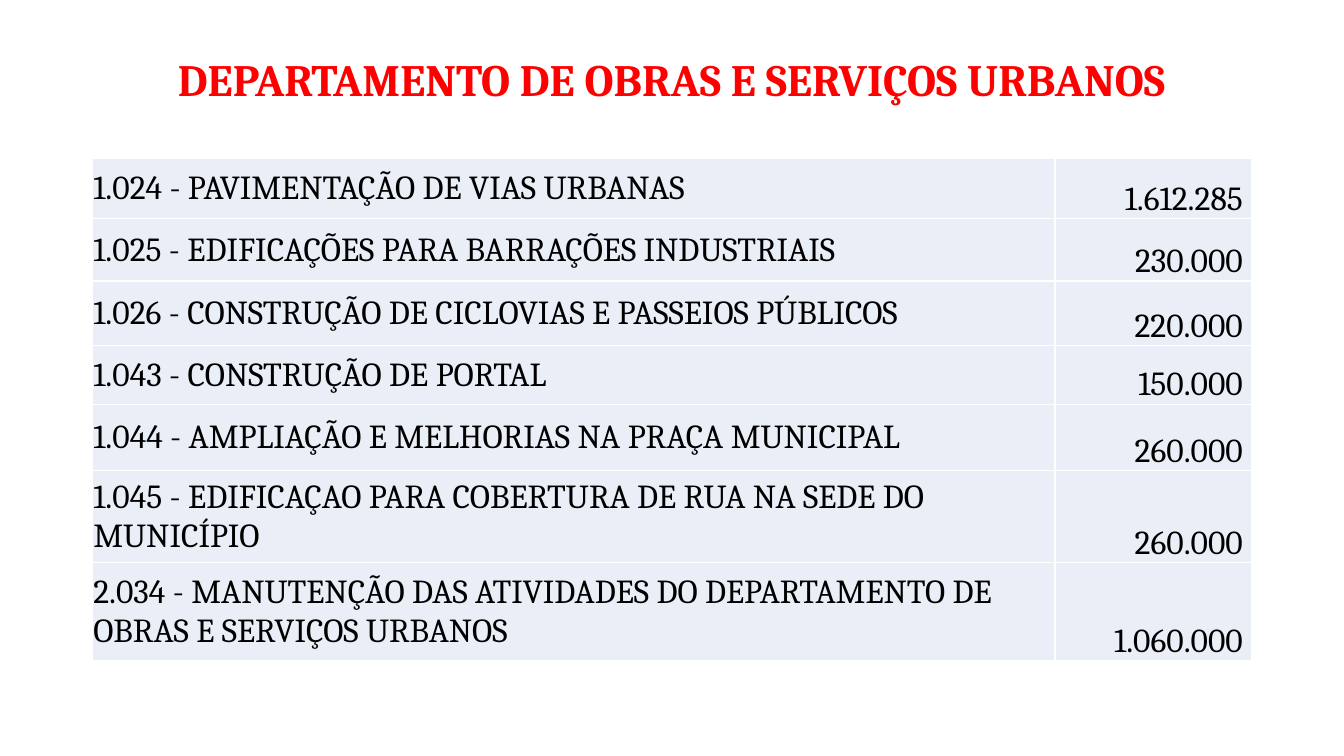
from lxml import etree
from pptx import Presentation
from pptx import util as u
from pptx.dml.color import RGBColor
from pptx.enum import text
from pptx.oxml import ns

RED = RGBColor(0xFF, 0, 0)
BLACK = RGBColor(0, 0, 0)
WHITE = RGBColor(0xFF, 0xFF, 0xFF)
PALE = RGBColor(0xEA, 0xEF, 0xF7)
FONT = "Cambria"
WORKS = [
    ("1.024 - PAVIMENTAÇÃO DE VIAS URBANAS", "1.612.285", 43.2),
    ("1.025 - EDIFICAÇÕES PARA BARRAÇÕES INDUSTRIAIS", "230.000", 44.6),
    ("1.026 - CONSTRUÇÃO DE CICLOVIAS E PASSEIOS PÚBLICOS", "220.000", 46),
    ("1.043 - CONSTRUÇÃO DE PORTAL", "150.000", 42),
    ("1.044 - AMPLIAÇÃO E MELHORIAS NA PRAÇA MUNICIPAL", "260.000", 47.5),
    ("1.045 - EDIFICAÇAO PARA COBERTURA DE RUA NA SEDE DO MUNICÍPIO", "260.000", 65.8),
    ("2.034 - MANUTENÇÃO DAS ATIVIDADES DO DEPARTAMENTO DE OBRAS E SERVIÇOS URBANOS",
     "1.060.000", 69.8),
]
LEFT, WIDTH = u.Pt(66), u.Pt(828)


def style(para, size, color, align):
    para.alignment = align
    for run in para.runs:
        run.font.name = FONT
        run.font.size = u.Pt(size)
        run.font.color.rgb = color


def border(cell):
    props = cell._tc.get_or_add_tcPr()
    for spot, side in enumerate(("lnL", "lnR", "lnT", "lnB")):
        line = etree.Element(ns.qn("a:" + side), w=str(u.Pt(1)))
        fill = etree.SubElement(line, ns.qn("a:solidFill"))
        etree.SubElement(fill, ns.qn("a:srgbClr"), val=str(WHITE))
        props.insert(spot, line)


deck = Presentation()
deck.slide_width, deck.slide_height = u.Pt(960), u.Pt(540)
slide = deck.slides.add_slide(deck.slide_layouts[5])

title = slide.shapes.title
title.left, title.top, title.width, title.height = LEFT, u.Pt(28.8), WIDTH, u.Pt(59)
frame = title.text_frame
frame.text = "DEPARTAMENTO DE OBRAS E SERVIÇOS URBANOS"
frame.vertical_anchor = text.MSO_ANCHOR.MIDDLE
head = frame.paragraphs[0]
head.line_spacing = 0.9
style(head, 32, RED, text.PP_ALIGN.CENTER)
head.runs[0].font.bold = True

high = u.Pt(sum(work[2] for work in WORKS))
table = slide.shapes.add_table(len(WORKS), 2, LEFT, u.Pt(113), WIDTH, high).table
table.first_row = False
table.horz_banding = False
table.columns[0].width = u.Pt(687.6)
table.columns[1].width = u.Pt(140.4)

looks = [
    (text.MSO_ANCHOR.MIDDLE, text.PP_ALIGN.LEFT, 0.7),
    (text.MSO_ANCHOR.BOTTOM, text.PP_ALIGN.RIGHT, 6.3),
]
for row, (name, value, tall) in zip(table.rows, WORKS):
    row.height = u.Pt(tall)
    for cell, words, (anchor, align, right) in zip(row.cells, (name, value), looks):
        cell.text_frame.text = words
        cell.vertical_anchor = anchor
        cell.margin_left = cell.margin_top = u.Pt(0.7)
        cell.margin_right = u.Pt(right)
        cell.margin_bottom = 0
        cell.fill.solid()
        cell.fill.fore_color.rgb = PALE
        border(cell)
        style(cell.text_frame.paragraphs[0], 24, BLACK, align)

deck.save("out.pptx")
